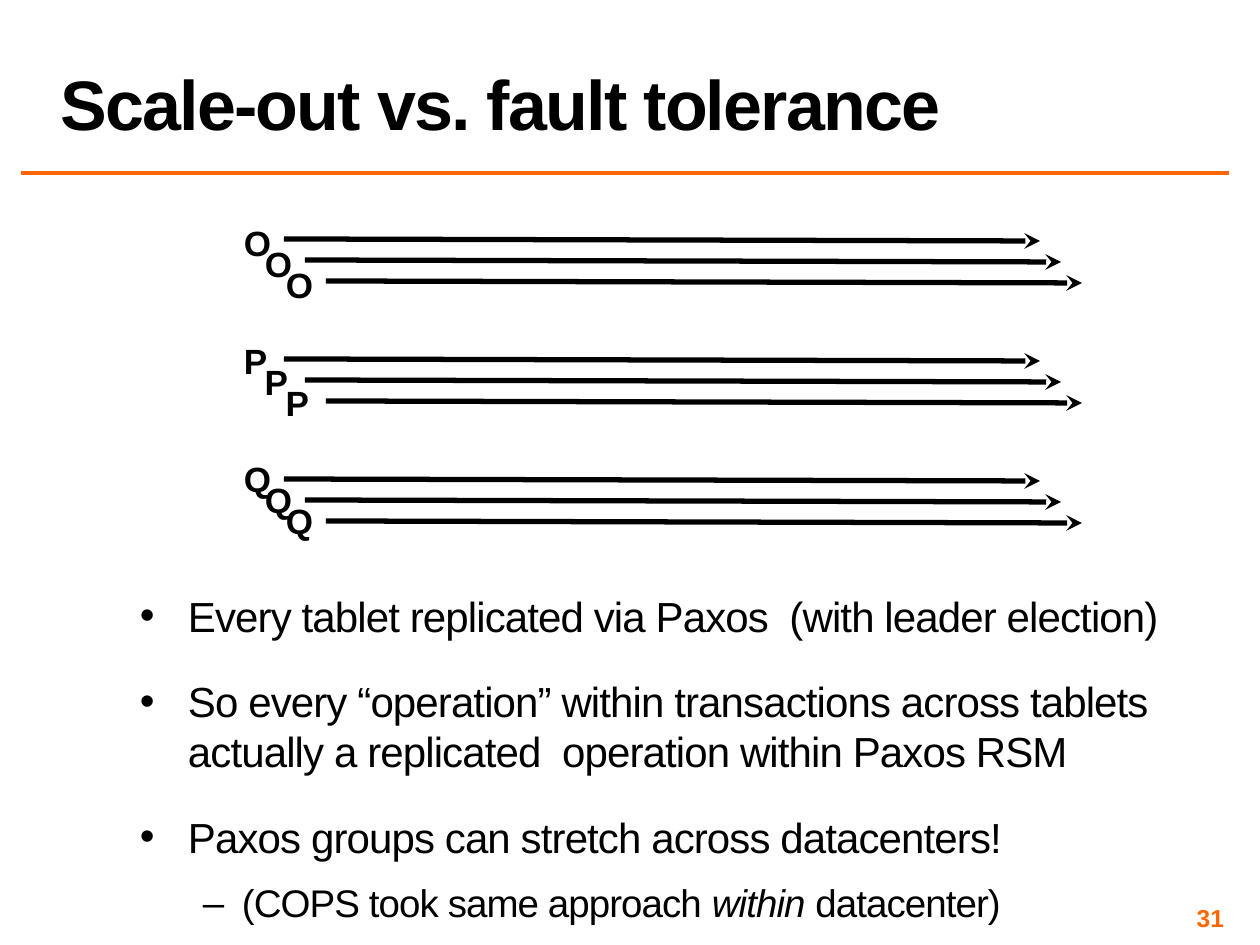
from lxml import etree
from pptx import Presentation
from pptx import util as u
from pptx.dml.color import RGBColor
from pptx.enum import shapes, text
from pptx.oxml.ns import qn

SCALE = 914400 / 126  # EMU in one px
BLACK, ORANGE = "000000", "FF6600"
LEFT, CENTER, RIGHT = text.PP_ALIGN.LEFT, text.PP_ALIGN.CENTER, text.PP_ALIGN.RIGHT
TOP, MIDDLE, BOTTOM = (text.MSO_ANCHOR.TOP, text.MSO_ANCHOR.MIDDLE,
                       text.MSO_ANCHOR.BOTTOM)

TITLE = "Scale-out vs. fault tolerance"
NUMBER = "31"
TABLETS = [("O", 53), ("P", 49), ("Q", 53)]  # letter, box width
COPIES = 3
SHIFT = 21  # each replica moves right and down by this much

# level, runs of (words, italic)
POINTS = [
    (0, [("Every tablet replicated via Paxos  (with leader election)", False)]),
    (0, [("So every “operation” within transactions across tablets "
          "actually a replicated  operation within Paxos RSM", False)]),
    (0, [("Paxos groups can stretch across datacenters!", False)]),
    (1, [("(COPS took same approach ", False), ("within ", True),
         ("datacenter)", False)]),
]
LEVELS = [
    dict(bullet="•", size=24, left=48, hang=48, before=12, after=8, lead=1.0),
    dict(bullet="–", size=22, left=102, hang=39, before=4, after=4, lead=0.95),
]


def px(n):
    return u.Emu(round(n * SCALE))


def rgb(code):
    return RGBColor.from_string(code)


def add_box(slide, x, y, w, h, anchor=TOP, inset=None, wrap=True):
    frame = slide.shapes.add_textbox(px(x), px(y), px(w), px(h)).text_frame
    frame.word_wrap = wrap
    frame.vertical_anchor = anchor
    if inset is not None:
        frame.margin_left = frame.margin_right = px(inset)
        frame.margin_top = frame.margin_bottom = px(inset)
    return frame


def add_run(para, words, size, color=BLACK, bold=False, italic=False, track=0):
    """Add one run; track is letter spacing in points."""
    run = para.add_run()
    run.text = words
    font = run.font
    font.name, font.size = "Arial", u.Pt(size)
    font.bold, font.italic = bold, italic
    font.color.rgb = rgb(color)
    if track:
        font._element.set("spc", str(round(track * 100)))


def add_line(slide, x1, y1, x2, y2, color, width, arrow=False):
    line = slide.shapes.add_connector(
        shapes.MSO_CONNECTOR.STRAIGHT, px(x1), px(y1), px(x2), px(y2))
    line.line.color.rgb = rgb(color)
    line.line.width = u.Pt(width)
    if arrow:
        etree.SubElement(line.line._get_or_add_ln(), qn("a:tailEnd"),
                         type="stealth")
    etree.SubElement(line._element.spPr, qn("a:effectLst"))


def set_bullet(para, mark, left, hang):
    props = para._p.get_or_add_pPr()
    props.set("marL", str(px(left)))
    props.set("indent", str(-px(hang)))
    etree.SubElement(props, qn("a:buFont"), typeface="Arial")
    etree.SubElement(props, qn("a:buChar"), char=mark)


def add_frame(slide):
    add_line(slide, 21, 173, 1229, 173, ORANGE, 2)
    para = add_box(slide, 935, 903, 294, 29, MIDDLE, 5).paragraphs[0]
    para.alignment = RIGHT
    add_run(para, NUMBER, 14, ORANGE, bold=True)
    para = add_box(slide, 48, 3, 1181, 147, BOTTOM).paragraphs[0]
    para.alignment = LEFT
    para.line_spacing = 0.8
    add_run(para, TITLE, 40, bold=True, track=-1)


def add_tablets(slide):
    for row, (letter, width) in enumerate(TABLETS):
        for copy in range(COPIES):
            step = copy * SHIFT
            x, y = 284 + step, 239 + row * 120 + step
            add_line(slide, x, y, x + 756, y + 2, BLACK, 3, arrow=True)
            frame = add_box(slide, 231 + step, 215 + row * 118 + step,
                            width, 55, wrap=False)
            frame.auto_size = text.MSO_AUTO_SIZE.SHAPE_TO_FIT_TEXT
            para = frame.paragraphs[0]
            para.alignment = CENTER
            add_run(para, letter, 20, bold=True)


def add_points(slide):
    frame = add_box(slide, 135, 585, 1070, 369, inset=5)
    for i, (level, runs) in enumerate(POINTS):
        para = frame.add_paragraph() if i else frame.paragraphs[0]
        look = LEVELS[level]
        para.level = level
        para.line_spacing = look["lead"]
        para.space_before = u.Pt(look["before"])
        para.space_after = u.Pt(look["after"])
        set_bullet(para, look["bullet"], look["left"], look["hang"])
        for words, italic in runs:
            add_run(para, words, look["size"], italic=italic, track=-0.5)


def main():
    deck = Presentation()
    deck.slide_width, deck.slide_height = px(1260), px(945)
    slide = deck.slides.add_slide(deck.slide_layouts[6])
    add_frame(slide)
    add_tablets(slide)
    add_points(slide)
    deck.save("out.pptx")


if __name__ == "__main__":
    main()
